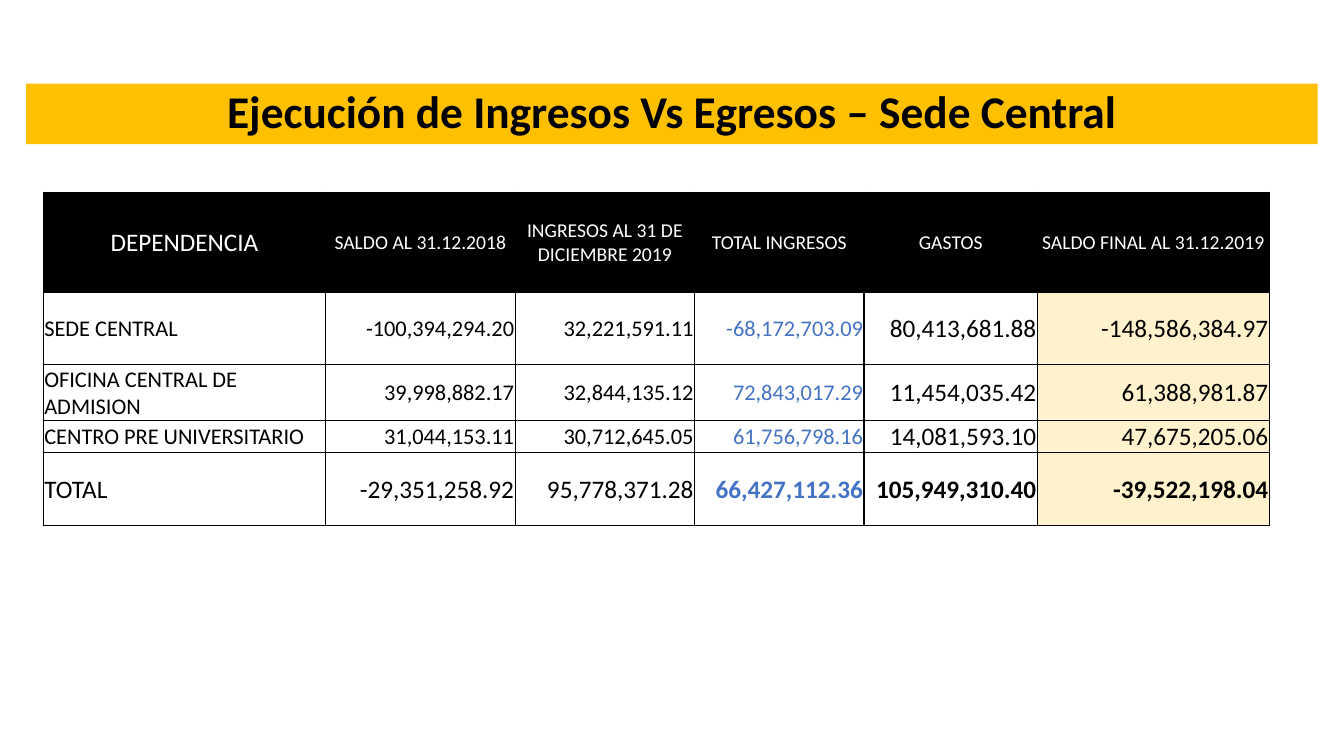
from lxml.etree import SubElement
from pptx import Presentation
from pptx.dml.color import RGBColor
from pptx.enum.shapes import MSO_SHAPE
from pptx.enum.text import MSO_ANCHOR, PP_ALIGN
from pptx.oxml.ns import qn
from pptx.util import Inches, Pt

BLACK = RGBColor(0x00, 0x00, 0x00)
WHITE = RGBColor(0xFF, 0xFF, 0xFF)
GOLD = RGBColor(0xFF, 0xC0, 0x00)
CREAM = RGBColor(0xFF, 0xF2, 0xCC)
BLUE = RGBColor(0x44, 0x72, 0xC4)

TITLE = "Ejecución de Ingresos Vs Egresos – Sede Central"
COL_WIDTHS = [2.8, 1.88, 1.78, 1.68, 1.72, 2.3]
ROW_HEIGHTS = [0.99, 0.72, 0.54, 0.32, 0.72]
ROWS = [
    ["DEPENDENCIA", "SALDO AL 31.12.2018", "INGRESOS AL 31 DE DICIEMBRE 2019",
     "TOTAL INGRESOS", "GASTOS", "SALDO FINAL AL 31.12.2019"],
    ["SEDE CENTRAL", "-100,394,294.20", "32,221,591.11",
     "-68,172,703.09", "80,413,681.88", "-148,586,384.97"],
    ["OFICINA CENTRAL DE ADMISION", "39,998,882.17", "32,844,135.12",
     "72,843,017.29", "11,454,035.42", "61,388,981.87"],
    ["CENTRO PRE UNIVERSITARIO", "31,044,153.11", "30,712,645.05",
     "61,756,798.16", "14,081,593.10", "47,675,205.06"],
    ["TOTAL", "-29,351,258.92", "95,778,371.28",
     "66,427,112.36", "105,949,310.40", "-39,522,198.04"],
]
TOTAL_ROW = len(ROWS) - 1
TOTAL_INCOME_COL, EXPENSES_COL, BALANCE_COL = 3, 4, 5


def write_text(tf, text, font="Calibri", size=16, color=BLACK, bold=False,
               align=PP_ALIGN.LEFT, line_spacing=None):
    tf.word_wrap = True
    p = tf.paragraphs[0]
    p.alignment = align
    p.line_spacing = line_spacing
    r = p.add_run()
    r.text = text
    r.font.name = font
    r.font.size = Pt(size)
    r.font.bold = bold
    r.font.color.rgb = color


def cell_format(row, col):
    if row == 0:
        return dict(size=14 if col else 18, color=WHITE, align=PP_ALIGN.CENTER)
    is_total = row == TOTAL_ROW
    return dict(
        size=18 if is_total or col >= EXPENSES_COL else 16,
        color=BLUE if col == TOTAL_INCOME_COL else BLACK,
        bold=is_total and col >= TOTAL_INCOME_COL,
        align=PP_ALIGN.RIGHT if col else PP_ALIGN.LEFT,
    )


def cell_fill(row, col):
    if row == 0:
        return BLACK
    return CREAM if col == BALANCE_COL else None


class SlideBuilder:
    def __init__(self, slide, font="Calibri", border=BLACK, border_width=1):
        self.slide = slide
        self.font = font
        self.border = border
        self.border_width = border_width

    def banner(self, text, left, top, width, height):
        sp = self.slide.shapes.add_shape(
            MSO_SHAPE.RECTANGLE, Inches(left), Inches(top), Inches(width), Inches(height))
        sp.shadow.inherit = False
        sp.fill.solid()
        sp.fill.fore_color.rgb = GOLD
        sp.line.fill.background()
        sp.text_frame.vertical_anchor = MSO_ANCHOR.MIDDLE
        write_text(sp.text_frame, text, font=self.font, size=32.4, bold=True,
                   align=PP_ALIGN.CENTER, line_spacing=0.9)

    def table(self, rows, left, top, widths, heights):
        table = self.slide.shapes.add_table(
            len(rows), len(widths), Inches(left), Inches(top),
            Inches(sum(widths)), Inches(sum(heights))).table
        table.first_row = False
        table.horz_banding = False
        for column, width in zip(table.columns, widths):
            column.width = Inches(width)
        for row, height in zip(table.rows, heights):
            row.height = Inches(height)
        for i, values in enumerate(rows):
            for j, value in enumerate(values):
                self.cell(table.cell(i, j), value, cell_fill(i, j), **cell_format(i, j))

    def cell(self, cell, text, fill, **text_format):
        cell.margin_left = cell.margin_right = cell.margin_top = Inches(0.01)
        cell.margin_bottom = 0
        cell.vertical_anchor = MSO_ANCHOR.MIDDLE
        self.cell_borders(cell)
        if fill is None:
            cell.fill.background()
        else:
            cell.fill.solid()
            cell.fill.fore_color.rgb = fill
        write_text(cell.text_frame, text, font=self.font, **text_format)

    def cell_borders(self, cell):
        props = cell._tc.get_or_add_tcPr()
        for side in ("a:lnL", "a:lnR", "a:lnT", "a:lnB"):
            line = SubElement(props, qn(side), w=str(Pt(self.border_width)))
            solid = SubElement(line, qn("a:solidFill"))
            SubElement(solid, qn("a:srgbClr"), val=str(self.border))


def main():
    prs = Presentation()
    prs.slide_width = Inches(13.33)
    prs.slide_height = Inches(7.5)
    s = SlideBuilder(prs.slides.add_slide(prs.slide_layouts[6]))
    s.banner(TITLE, 0.26, 0.83, 12.81, 0.6)
    s.table(ROWS, 0.43, 1.91, COL_WIDTHS, ROW_HEIGHTS)
    prs.save("out.pptx")


if __name__ == "__main__":
    main()
